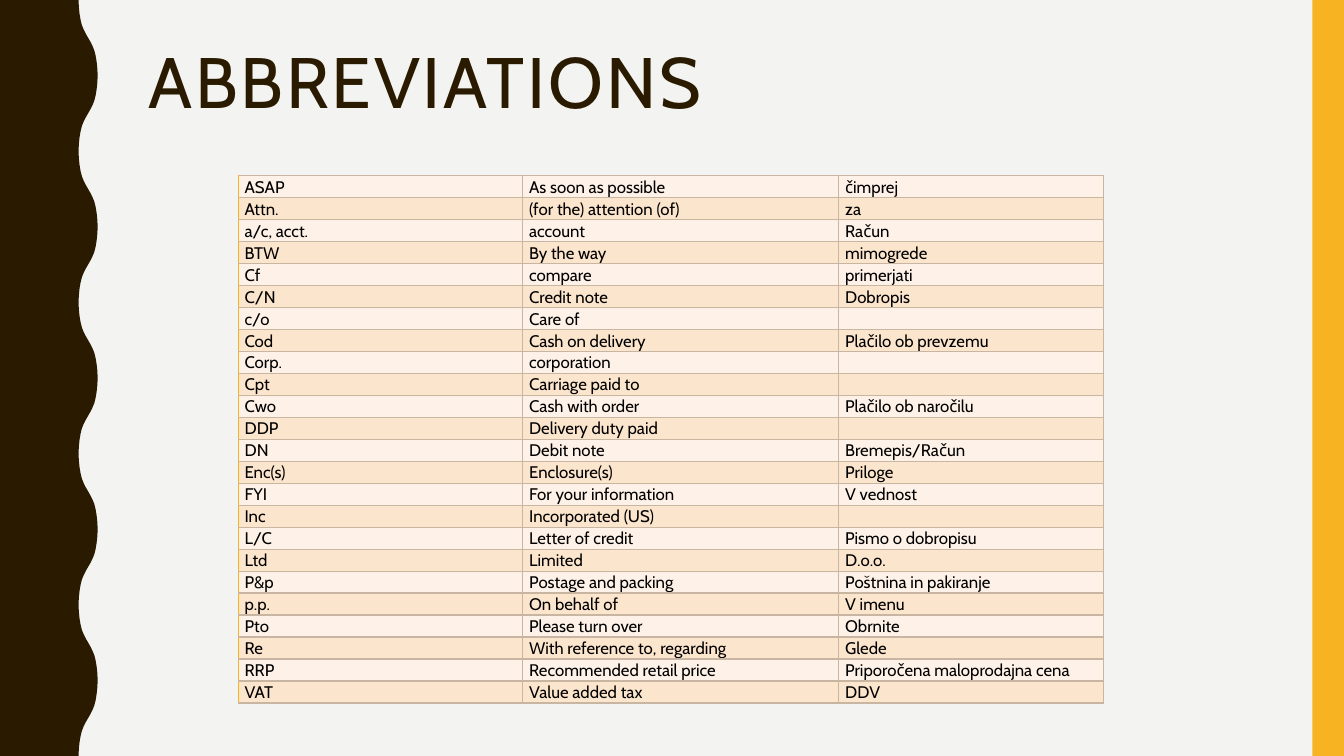
from lxml import etree
from pptx import Presentation
from pptx.dml.color import RGBColor
from pptx.enum.shapes import MSO_SHAPE
from pptx.enum.text import MSO_ANCHOR, MSO_AUTO_SIZE, PP_ALIGN
from pptx.oxml.ns import qn
from pptx.util import Pt

PX = 9525  # EMU per px
WIDE, HIGH = 1280, 720
RECT = MSO_SHAPE.RECTANGLE
TOP = MSO_ANCHOR.TOP
LEFT = PP_ALIGN.LEFT
NO_FIT = MSO_AUTO_SIZE.NONE

FACE = "Cabin"
DARK, GOLD, PAPER = "2A1A00", "F8B323", "F3F3F2"
BANDS = ["FEF2E8", "FCE5CD"]
RULE = "C8B5A2"

# One eighth-to-quarter of the wave, (down, across) in tenths of a px
CURVE = [(0, 0), (67, 3), (134, 10), (192, 20), (240, 32), (280, 48),
         (320, 68), (360, 91)]
HALF, DEPTH, WAVES = 720, 182, 5

TERMS = [
    ("ASAP", "As soon as possible", "čimprej"),
    ("Attn.", "(for the) attention (of)", "za"),
    ("a/c, acct.", "account", "Račun"),
    ("BTW", "By the way", "mimogrede"),
    ("Cf", "compare", "primerjati"),
    ("C/N", "Credit note", "Dobropis"),
    ("c/o", "Care of", ""),
    ("Cod", "Cash on delivery", "Plačilo ob prevzemu"),
    ("Corp.", "corporation", ""),
    ("Cpt", "Carriage paid to", ""),
    ("Cwo", "Cash with order", "Plačilo ob naročilu"),
    ("DDP", "Delivery duty paid", ""),
    ("DN", "Debit note", "Bremepis/Račun"),
    ("Enc(s)", "Enclosure(s)", "Priloge"),
    ("FYI", "For your information", "V vednost"),
    ("Inc", "Incorporated (US)", ""),
    ("L/C", "Letter of credit", "Pismo o dobropisu"),
    ("Ltd", "Limited", "D.o.o."),
    ("P&p", "Postage and packing", "Poštnina in pakiranje"),
    ("p.p.", "On behalf of", "V imenu"),
    ("Pto", "Please turn over", "Obrnite"),
    ("Re", "With reference to, regarding", "Glede"),
    ("RRP", "Recommended retail price", "Priporočena maloprodajna cena"),
    ("VAT", "Value added tax", "DDV"),
]


def color(code):
    return RGBColor.from_string(code)


def fmt(item, values):
    for name, value in values.items():
        setattr(item, name, value)


def emu(box):
    return [n * PX for n in box]


def paint(shape, code):
    shape.shadow.inherit = False
    shape.fill.solid()
    shape.fill.fore_color.rgb = color(code)
    shape.line.fill.background()


def write(para, text, size, code, space):
    fmt(para, {"alignment": LEFT, "line_spacing": space})
    run = para.add_run()
    run.text = text
    fmt(run.font, {"name": FACE, "size": Pt(size), "bold": False})
    run.font.color.rgb = color(code)
    return run


# Wavy band down the left side
def add_wave(slide, box):
    x, y, wide, high = box
    rise = CURVE + [(HALF - d, DEPTH - a) for d, a in CURVE[-2::-1]]
    wave = rise + [(2 * HALF - d, a) for d, a in rise[-2::-1]]
    base = wide * 10 - DEPTH
    edge = [(base + a, d + n * 2 * HALF) for n in range(WAVES) for d, a in wave]
    form = slide.shapes.build_freeform(0, 0, scale=PX / 10)
    form.add_line_segments(edge + [(0, high * 10)], close=True)
    paint(form.convert_to_shape(x * PX, y * PX), DARK)


# Plain bar down the right side
def add_bar(slide, box):
    paint(slide.shapes.add_shape(RECT, *emu(box)), GOLD)


def add_title(slide, box, text):
    title = slide.shapes.title
    fmt(title, dict(zip(("left", "top", "width", "height"), emu(box))))
    frame = title.text_frame
    fmt(frame, {"word_wrap": True, "auto_size": NO_FIT, "vertical_anchor": TOP})
    run = write(frame.paragraphs[0], text, 51, DARK, 0.9)
    run.font._element.set("spc", "200")


def add_edge(cell, side, code):
    line = etree.SubElement(cell._tc.get_or_add_tcPr(), qn("a:" + side), w=str(Pt(1)))
    fill = etree.SubElement(line, qn("a:solidFill"))
    etree.SubElement(fill, qn("a:srgbClr"), val=code)


def fill_cell(cell, text, band, first):
    pad = 6 * PX
    fmt(cell, {"margin_left": pad, "margin_right": pad, "margin_top": 0,
               "margin_bottom": 0, "vertical_anchor": TOP})
    for side in ("lnL", "lnR", "lnT", "lnB"):
        add_edge(cell, side, GOLD if first and side == "lnL" else RULE)
    cell.fill.solid()
    cell.fill.fore_color.rgb = color(band)
    para = cell.text_frame.paragraphs[0]
    if text:
        write(para, text, 12, "000000", 1.07)
    else:  # keeps a blank cell as low as its row
        etree.SubElement(para._p, qn("a:endParaRPr"), sz="1200")


# Table of terms in three columns
def add_terms(slide, box, cols):
    table = slide.shapes.add_table(len(TERMS), len(cols), *emu(box)).table
    fmt(table, {"first_row": False, "horz_banding": False})
    for col, wide in zip(table.columns, cols):
        col.width = wide * PX
    for r, term in enumerate(TERMS):
        table.rows[r].height = box[3] * PX // len(TERMS)
        for c, text in enumerate(term):
            fill_cell(table.cell(r, c), text, BANDS[r % 2], c == 0)


def main():
    deck = Presentation()
    fmt(deck, {"slide_width": WIDE * PX, "slide_height": HIGH * PX})
    slide = deck.slides.add_slide(deck.slide_layouts[5])
    back = slide.background.fill
    back.solid()
    back.fore_color.rgb = color(PAPER)
    add_wave(slide, (0, 0, 93, HIGH))
    add_bar(slide, (1250, 0, 30, HIGH))
    add_title(slide, (132, 40, 1068, 156), "ABBREVIATIONS")
    add_terms(slide, (227, 167, 824, 494), (271, 301, 252))
    deck.save("out.pptx")


if __name__ == "__main__":
    main()
